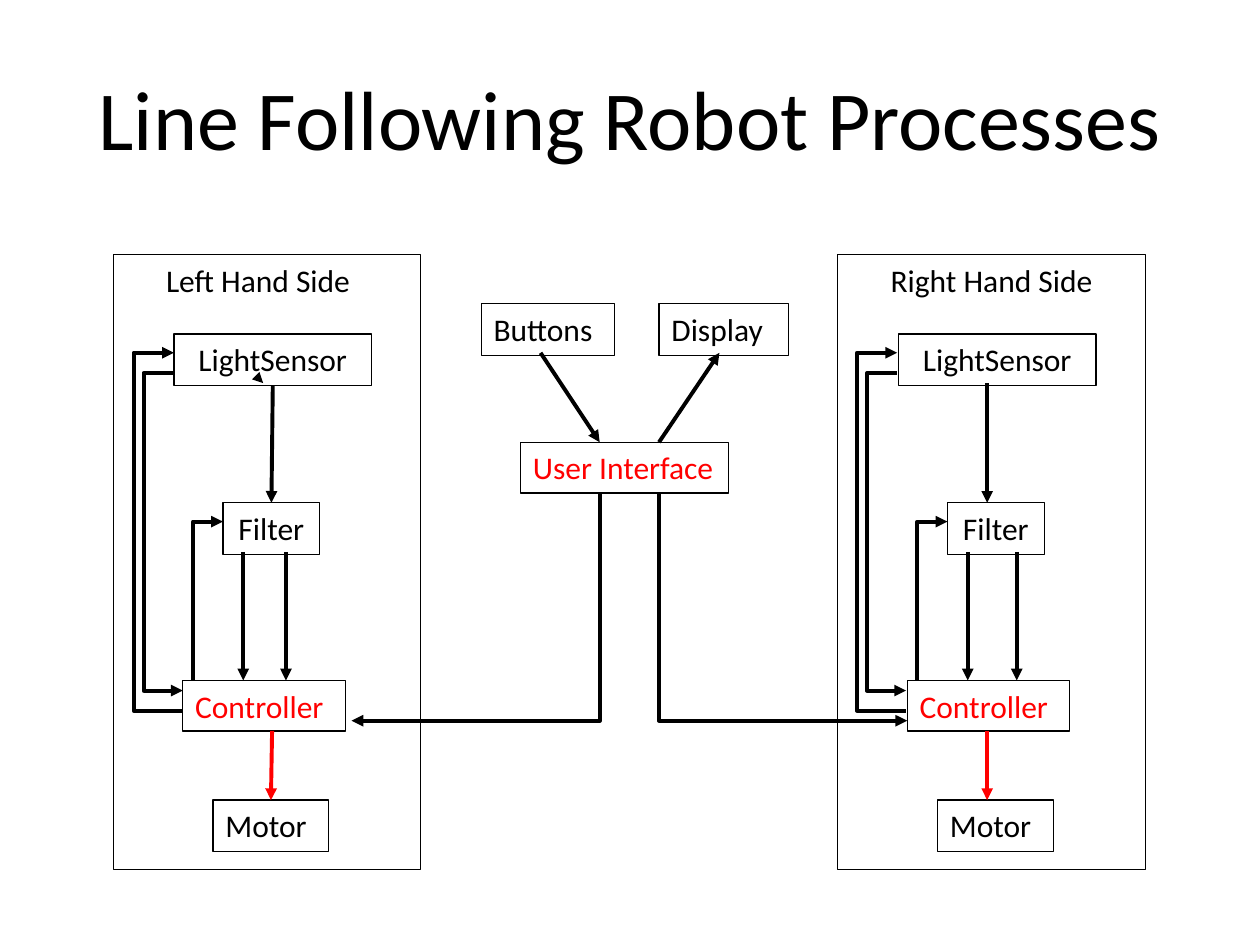
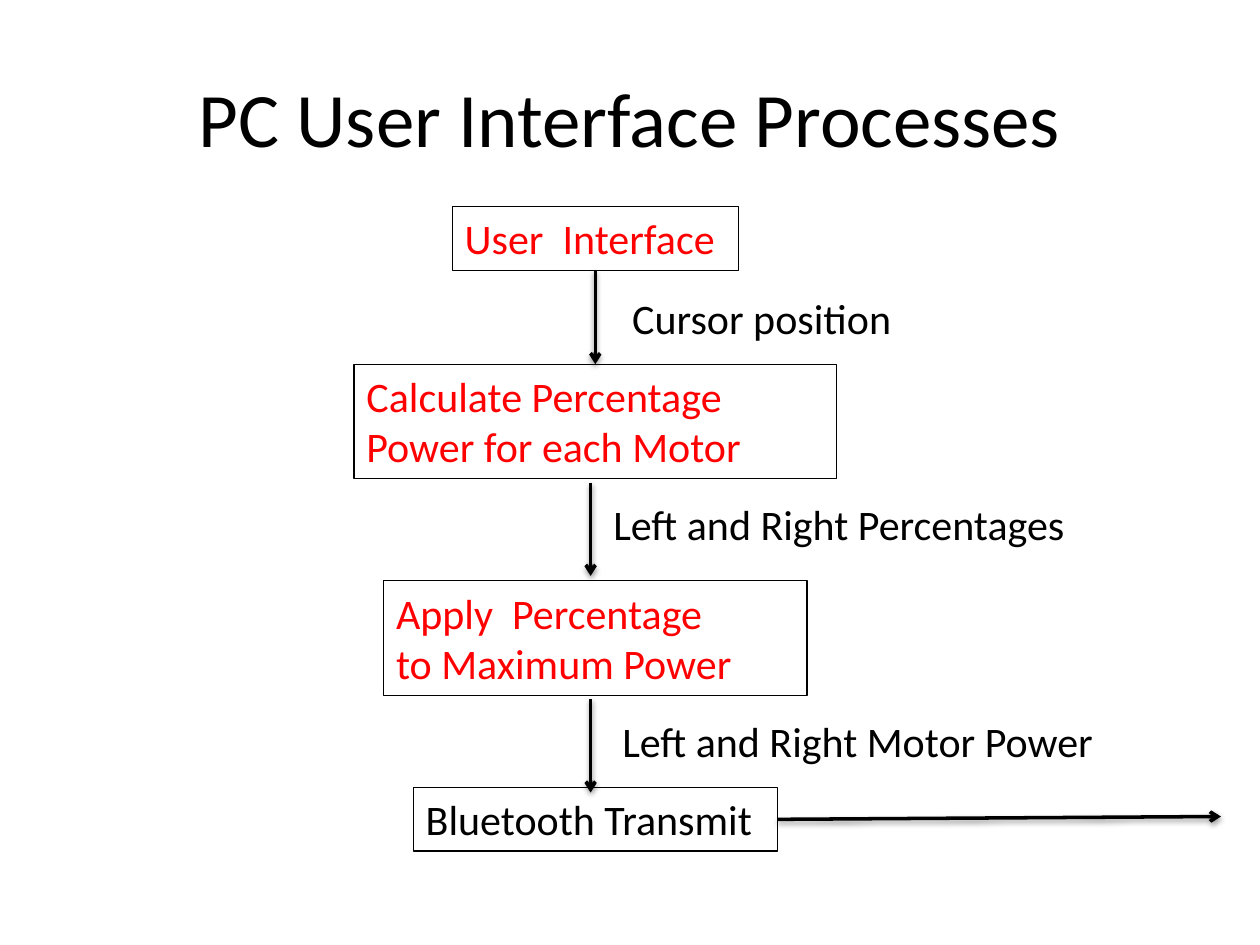
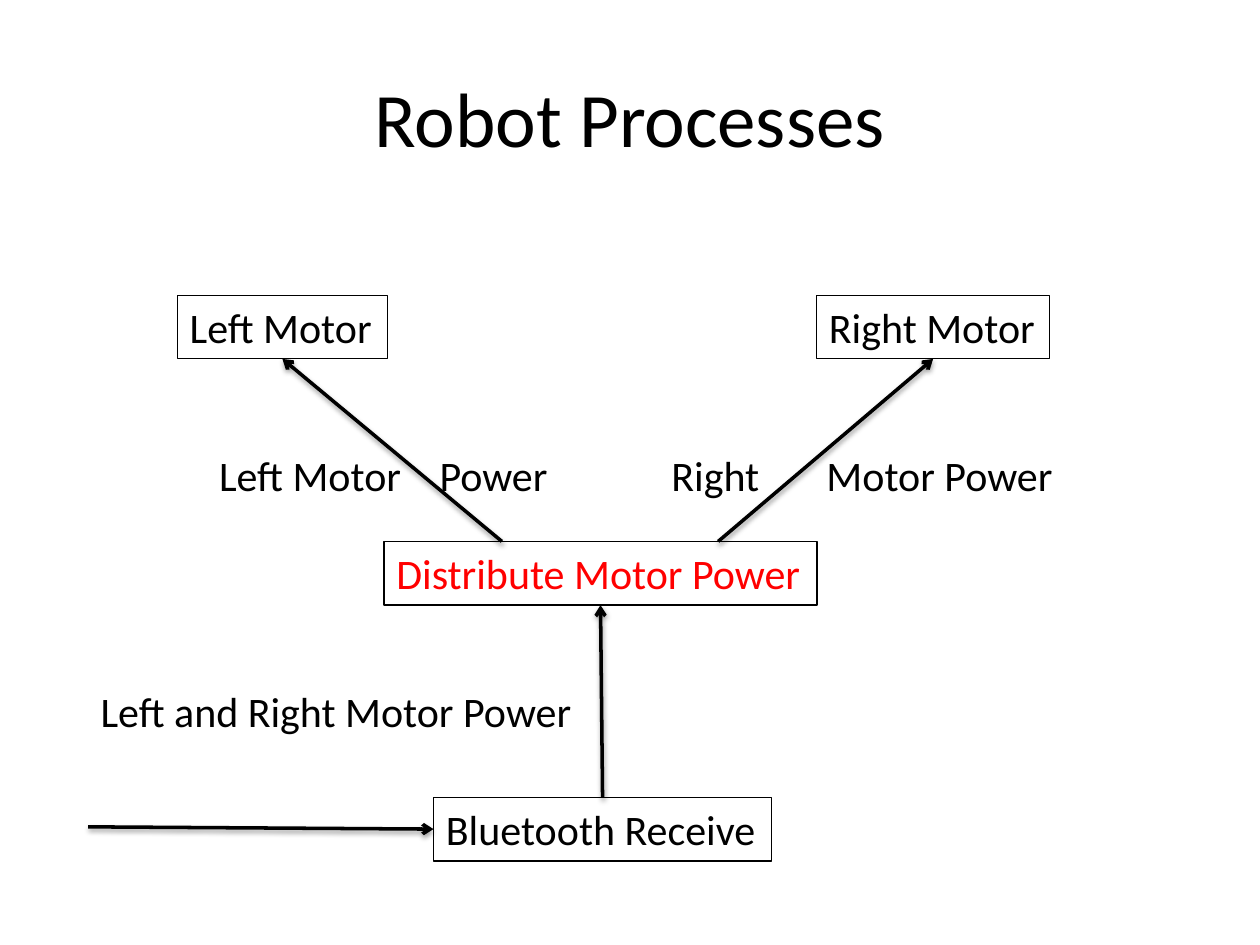
"""Build three process diagrams for a line following robot."""
from lxml.etree import SubElement
from pptx import Presentation
from pptx.dml.color import RGBColor
from pptx.enum.shapes import MSO_CONNECTOR, MSO_SHAPE
from pptx.enum.text import MSO_ANCHOR, PP_ALIGN
from pptx.oxml.ns import qn
from pptx.util import Pt

BLACK = RGBColor(0x00, 0x00, 0x00)
RED = RGBColor(0xFF, 0x00, 0x00)
FONT = "Calibri"
TOP, LEFT, BOTTOM, RIGHT = range(4)
SIDE_GAP = 414


def add_text(page, text, left, top, width, height, size=24, color=BLACK,
             align=PP_ALIGN.LEFT, anchor=MSO_ANCHOR.TOP, boxed=True, tab=None):
    frame = [Pt(length) for length in (left, top, width, height)]
    if boxed:
        box = page.shapes.add_shape(MSO_SHAPE.RECTANGLE, *frame)
        box.shadow.inherit = False
        box.fill.background()
        box.line.color.rgb = BLACK
        box.line.width = Pt(0.75)
    else:
        box = page.shapes.add_textbox(*frame)
    box.text_frame.word_wrap = True
    box.text_frame.vertical_anchor = anchor
    if align == PP_ALIGN.LEFT:
        box.text_frame.margin_right = 0
    para = box.text_frame.paragraphs[0]
    para.text = text
    para.alignment = align
    if tab:
        stops = SubElement(para._p.get_or_add_pPr(), qn("a:tabLst"))
        SubElement(stops, qn("a:tab"), pos=str(Pt(tab)), algn="l")
    for span in para.runs:
        span.font.name = FONT
        span.font.size = Pt(size)
        span.font.color.rgb = color
    return box


def add_arrow(page, *points, color=BLACK, width=2.25, head="triangle",
              shadow=False, begin=None, end=None):
    points = [(Pt(x), Pt(y)) for x, y in points]
    if len(points) == 2:
        arrow = page.shapes.add_connector(MSO_CONNECTOR.STRAIGHT, *points[0], *points[1])
        if begin:
            arrow.begin_connect(*begin)
        if end:
            arrow.end_connect(*end)
    else:
        builder = page.shapes.build_freeform(*points[0])
        builder.add_line_segments(points[1:], close=False)
        arrow = builder.convert_to_shape()
        arrow.fill.background()
    arrow.line.color.rgb = color
    arrow.line.width = Pt(width)
    properties = arrow._element.spPr
    SubElement(properties.find(qn("a:ln")), qn("a:tailEnd"), type=head)
    effects = SubElement(properties, qn("a:effectLst"))
    if shadow:
        outer = SubElement(effects, qn("a:outerShdw"), blurRad=str(Pt(3.1)),
                           dist=str(Pt(1.6)), dir="5400000", rotWithShape="0")
        shade = SubElement(outer, qn("a:srgbClr"), val=str(BLACK))
        SubElement(shade, qn("a:alpha"), val="38000")


deck = Presentation()
deck.slide_width, deck.slide_height = Pt(720), Pt(540)
pages = []
for title, size in (("Line Following Robot Processes", 48),
                    ("PC User Interface Processes", 44),
                    ("Robot Processes", 44)):
    page = deck.slides.add_slide(deck.slide_layouts[6])
    add_text(page, title, 36, 21.6, 648, 90, size, align=PP_ALIGN.CENTER,
             anchor=MSO_ANCHOR.MIDDLE, boxed=False)
    pages.append(page)
line_page, computer_page, robot_page = pages

for side, shift, loop_shift, spine, second_output in (
        ("Left", 0, 0, 155.5, 163.4),
        ("Right", SIDE_GAP, SIDE_GAP - 0.7, 150.1, 167)):
    add_text(line_page, "", 64.8 + shift, 145.4, 175.7, 351.4)
    add_text(line_page, f"{side} Hand Side", 87.8 + shift, 145.4, 146, 29, 18, boxed=False)
    sensor = add_text(line_page, "LightSensor", 99.4 + shift, 190.8, 113, 29.5, 18,
                      align=PP_ALIGN.CENTER)
    filter_box = add_text(line_page, "Filter", 127.4 + shift, 287.3, 55.4, 29.5, 18,
                          align=PP_ALIGN.CENTER)
    add_text(line_page, "Controller", 104.4 + shift, 388.8, 92.9, 29, 18, RED)
    motor = add_text(line_page, "Motor", 121.7 + shift, 457.2, 66.2, 29.5, 18)

    centred = side == "Left"
    spine += shift
    add_arrow(line_page, (spine, 218.9), (spine, 287.3),
              begin=(sensor, BOTTOM) if centred else None,
              end=(filter_box, TOP) if centred else None)
    add_arrow(line_page, (spine, 417.6), (spine, 457.2), color=RED,
              end=(motor, TOP) if centred else None)
    for output in (139, second_output):
        add_arrow(line_page, (output + shift, 315.4), (output + shift, 388.8))
    for offset, route in (
            (loop_shift, ((104.4, 406.1), (76.3, 406.1), (76.3, 201.6), (99.4, 201.6))),
            (loop_shift, ((99.4, 213.1), (82.1, 213.1), (82.1, 394.6), (104.4, 394.6))),
            (shift, ((110.2, 388.8), (110.2, 298.1), (127.4, 298.1)))):
        add_arrow(line_page, *[(x + offset, y) for x, y in route])

add_text(line_page, "Buttons", 275, 173.5, 76.3, 29.5, 18)
add_text(line_page, "Display", 376.6, 173.5, 74.2, 29.5, 18)
add_text(line_page, "User Interface", 297.4, 252.7, 118.8, 29, 18, RED)
add_arrow(line_page, (308.9, 201.6), (342.7, 252.7))
add_arrow(line_page, (376.6, 252.7), (411.1, 201.6))
for start, finish in ((342.7, 200.9), (376.6, 518.4)):
    add_arrow(line_page, (start, 281.5), (start, 411.8), (finish, 411.8))
add_arrow(line_page, (150, 218.5), (150.4, 218.9), width=0.75)

flow_style = {"width": 2, "head": "arrow", "shadow": True}
interface, calculate, apply_box, transmit = [
    add_text(computer_page, text, left, top, width, height, color=color)
    for text, left, top, width, height, color in (
        ("User  Interface", 258.5, 118.1, 163.4, 36.4, RED),
        ("Calculate Percentage\vPower for each Motor", 202.3, 208.1, 275.8, 65.5, RED),
        ("Apply  Percentage\vto Maximum Power", 219.2, 331.9, 242, 65.5, RED),
        ("Bluetooth Transmit", 236.2, 450, 208, 36.4, BLACK))]
add_arrow(computer_page, (340.2, 154.5), (340.2, 208.1),
          begin=(interface, BOTTOM), end=(calculate, TOP), **flow_style)
for top in (275.8, 399.6):
    add_arrow(computer_page, (337.5, top), (337.5, top + 53.3), **flow_style)
add_arrow(computer_page, (444.2, 468), (697.7, 466.6), begin=(transmit, RIGHT), **flow_style)
for text, left, top, width in (("Cursor position", 354.2, 163.4, 166),
                               ("Left and Right Percentages", 343.4, 281.5, 276),
                               ("Left and Right Motor Power", 348.5, 405.4, 287)):
    add_text(computer_page, text, left, top, width, 36.4, boxed=False)

receive, distribute, left_motor, right_motor = [
    add_text(robot_page, text, left, top, width, 36.4, color=color)
    for text, left, top, width, color in (
        ("Bluetooth Receive", 247.7, 455.6, 193.3, BLACK),
        ("Distribute Motor Power", 219.4, 309.4, 247.5, RED),
        ("Left Motor", 101.3, 168.7, 120.2, BLACK),
        ("Right Motor", 466.6, 168.7, 133.2, BLACK))]
add_arrow(robot_page, (50.4, 472.5), (247.7, 472.5), end=(receive, LEFT), **flow_style)
add_arrow(robot_page, (344.2, 455.6), (342.7, 345.6),
          begin=(receive, TOP), end=(distribute, BOTTOM), **flow_style)
for start, motor in ((286.8, left_motor), (410.4, right_motor)):
    add_arrow(robot_page, (start, 309.4), (start, 205.1), end=(motor, BOTTOM), **flow_style)
for text, left, top, width, tab in (
        ("Left and Right Motor Power", 50.4, 388.1, 287, None),
        ("Left Motor\tPower", 118.1, 253.4, 204.5, 126),
        ("Right\tMotor Power", 376.6, 253.4, 233.3, 88.6)):
    add_text(robot_page, text, left, top, width, 36.4, boxed=False, tab=tab)

deck.save("out.pptx")
